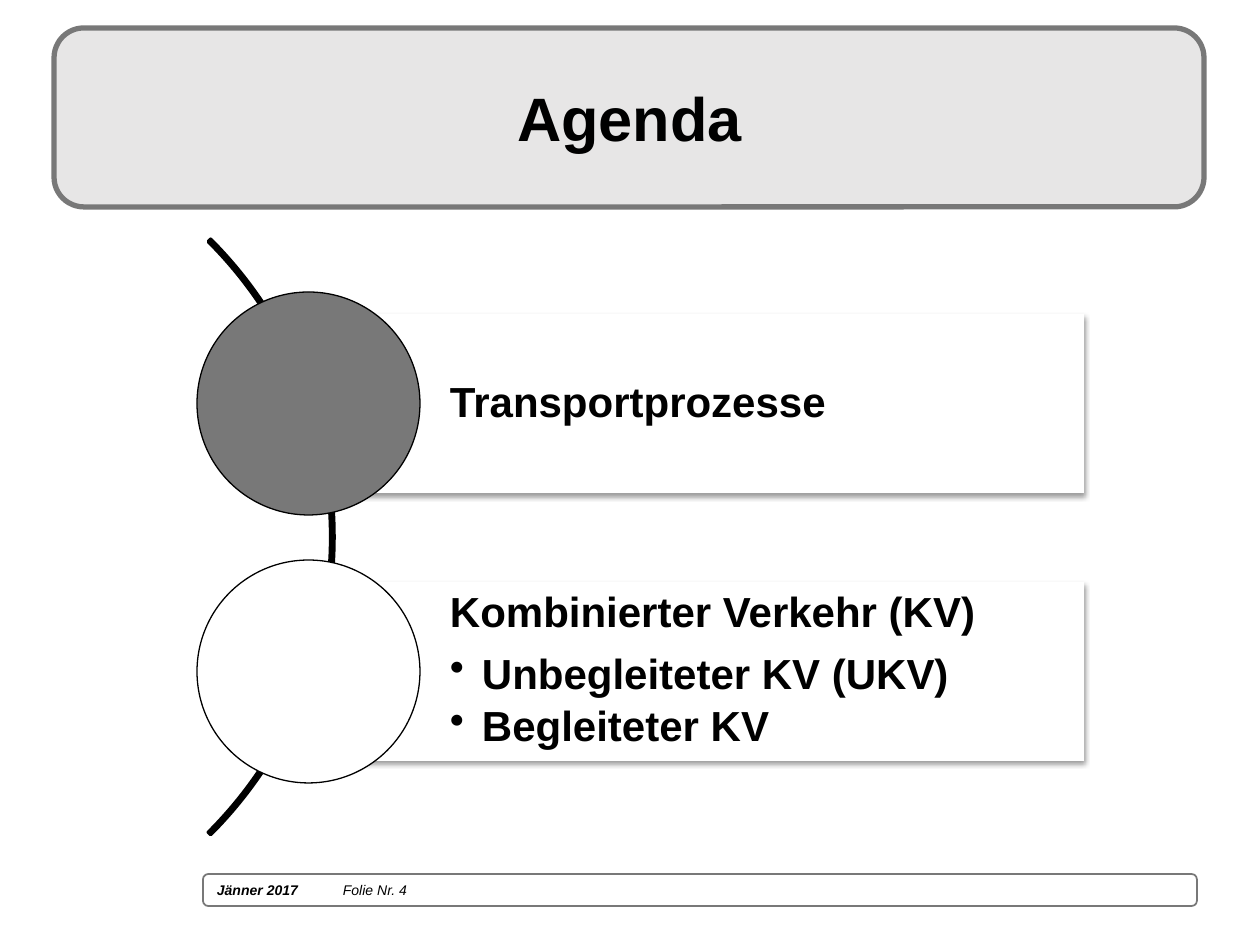
from dataclasses import dataclass

from lxml.etree import SubElement
from pptx import Presentation
from pptx.dml.color import RGBColor
from pptx.enum.shapes import MSO_SHAPE as Shape
from pptx.enum.text import MSO_ANCHOR as Anchor, MSO_AUTO_SIZE as AutoSize, PP_ALIGN as Align
from pptx.oxml.ns import qn
from pptx.util import Inches, Pt

# Content
TITLE = "Agenda"
DATE, PAGE = "Jänner 2017", "Folie Nr. 4"
TOPICS = [
    {"heading": "Transportprozesse", "points": [], "marker": "787878", "anchor": Anchor.MIDDLE},
    {"heading": "Kombinierter Verkehr (KV)",
     "points": ["Unbegleiteter KV (UKV)", "Begleiteter KV"],
     "marker": "FFFFFF", "anchor": Anchor.TOP},
]


@dataclass(frozen=True)
class Theme:
    font: str = "Arial"
    text: str = "000000"
    white: str = "FFFFFF"
    gray: str = "787878"
    light: str = "E7E6E6"
    title_size: int = 35
    topic_size: int = 24
    footer_size: int = 8


THEME = Theme()

# Layout in px
PX_PER_INCH = 126
FOOTER = (203, 874, 994, 32)
FRAME = (54, 28, 1150, 179)
TITLE_BOX = (74, 38, 1111, 158)
ARC = (-508, 116, 842, 842)
ROW_CENTER, ROW_PITCH = 403, 268
PANEL_LEFT, PANEL_WIDTH, PANEL_HEIGHT = 309, 775, 179
MARKER_LEFT, MARKER_SIZE = 197, 223
TEXT_INSET, EDGE_INSET, BULLET_INDENT = 141, 9, 32


def px(value):
    return Inches(value / PX_PER_INCH)


def place(shape, box):
    shape.left, shape.top, shape.width, shape.height = map(px, box)


def add_shape(slide, kind, box, fill, line=None, width=1):
    shape = slide.shapes.add_shape(kind, *map(px, box))
    shape.shadow.inherit = False
    shape.fill.solid()
    shape.fill.fore_color.rgb = RGBColor.from_string(fill)
    if line:
        shape.line.color.rgb = RGBColor.from_string(line)
        shape.line.width = Pt(width)
    else:
        shape.line.fill.background()
    return shape


def add_run(paragraph, text, size, bold=True, italic=False):
    run = paragraph.add_run()
    run.text = text
    font = run.font
    font.name, font.size, font.bold, font.italic = THEME.font, Pt(size), bold, italic
    font.color.rgb = RGBColor.from_string(THEME.text)


def add_soft_shadow(shape):
    effects = shape.element.spPr.find(qn("a:effectLst"))
    shadow = SubElement(effects, qn("a:outerShdw"), blurRad=str(Pt(3.1)), dist=str(Pt(1.6)),
                        dir="5400000", algn="ctr", rotWithShape="0")
    color = SubElement(shadow, qn("a:srgbClr"), val=THEME.text)
    SubElement(color, qn("a:alpha"), val="38000")


def add_bullet(paragraph):
    properties = paragraph._p.get_or_add_pPr()
    properties.set("marL", str(px(BULLET_INDENT)))
    properties.set("indent", str(-px(BULLET_INDENT)))
    SubElement(properties, qn("a:buChar"), char="•")


def add_topic(slide, topic, center):
    panel = add_shape(slide, Shape.RECTANGLE,
                      (PANEL_LEFT, center - PANEL_HEIGHT // 2, PANEL_WIDTH, PANEL_HEIGHT),
                      THEME.white)
    add_soft_shadow(panel)
    frame = panel.text_frame
    frame.word_wrap = True
    frame.vertical_anchor = topic["anchor"]
    frame.margin_left = px(TEXT_INSET)
    frame.margin_top = frame.margin_right = frame.margin_bottom = px(EDGE_INSET)
    for index, text in enumerate([topic["heading"], *topic["points"]]):
        paragraph = frame.add_paragraph() if index else frame.paragraphs[0]
        if index:
            add_bullet(paragraph)
        paragraph.alignment = Align.LEFT
        paragraph.line_spacing = 0.9
        if topic["points"]:
            paragraph.space_after = Pt(4 if index else 9.5)
        add_run(paragraph, text, THEME.topic_size)
    add_shape(slide, Shape.OVAL,
              (MARKER_LEFT, center - MARKER_SIZE // 2, MARKER_SIZE, MARKER_SIZE),
              topic["marker"], THEME.text, 0.75)


def add_footer(slide):
    footer = add_shape(slide, Shape.ROUNDED_RECTANGLE, FOOTER, THEME.white, THEME.gray)
    footer.text_frame.vertical_anchor = Anchor.MIDDLE
    paragraph = footer.text_frame.paragraphs[0]
    tabs = SubElement(paragraph._p.get_or_add_pPr(), qn("a:tabLst"))
    SubElement(tabs, qn("a:tab"), pos=str(Inches(1)), algn="l")
    paragraph.alignment = Align.LEFT
    add_run(paragraph, DATE + "\t", THEME.footer_size, italic=True)
    add_run(paragraph, PAGE, THEME.footer_size, bold=False, italic=True)


def add_title(slide):
    add_shape(slide, Shape.ROUNDED_RECTANGLE, FRAME, THEME.light, THEME.gray, 3)
    title = slide.shapes.title
    title.element.getparent().append(title.element)  # in front of its frame
    place(title, TITLE_BOX)
    title.text_frame.auto_size = AutoSize.NONE
    title.text_frame.vertical_anchor = Anchor.MIDDLE
    paragraph = title.text_frame.paragraphs[0]
    paragraph.alignment = Align.CENTER
    add_run(paragraph, TITLE, THEME.title_size)


def main():
    presentation = Presentation()
    presentation.slide_width, presentation.slide_height = Inches(10), Inches(7.5)
    slide = presentation.slides.add_slide(presentation.slide_layouts[5])
    add_footer(slide)
    add_title(slide)

    # Arc linking the topics, from 315 to 45 degrees
    arc = add_shape(slide, Shape.BLOCK_ARC, ARC, THEME.text, THEME.text, 2)
    for index, value in enumerate((189, 27, 0.004)):
        arc.adjustments[index] = value

    for index, topic in enumerate(TOPICS):
        add_topic(slide, topic, ROW_CENTER + index * ROW_PITCH)
    presentation.save("out.pptx")


if __name__ == "__main__":
    main()
